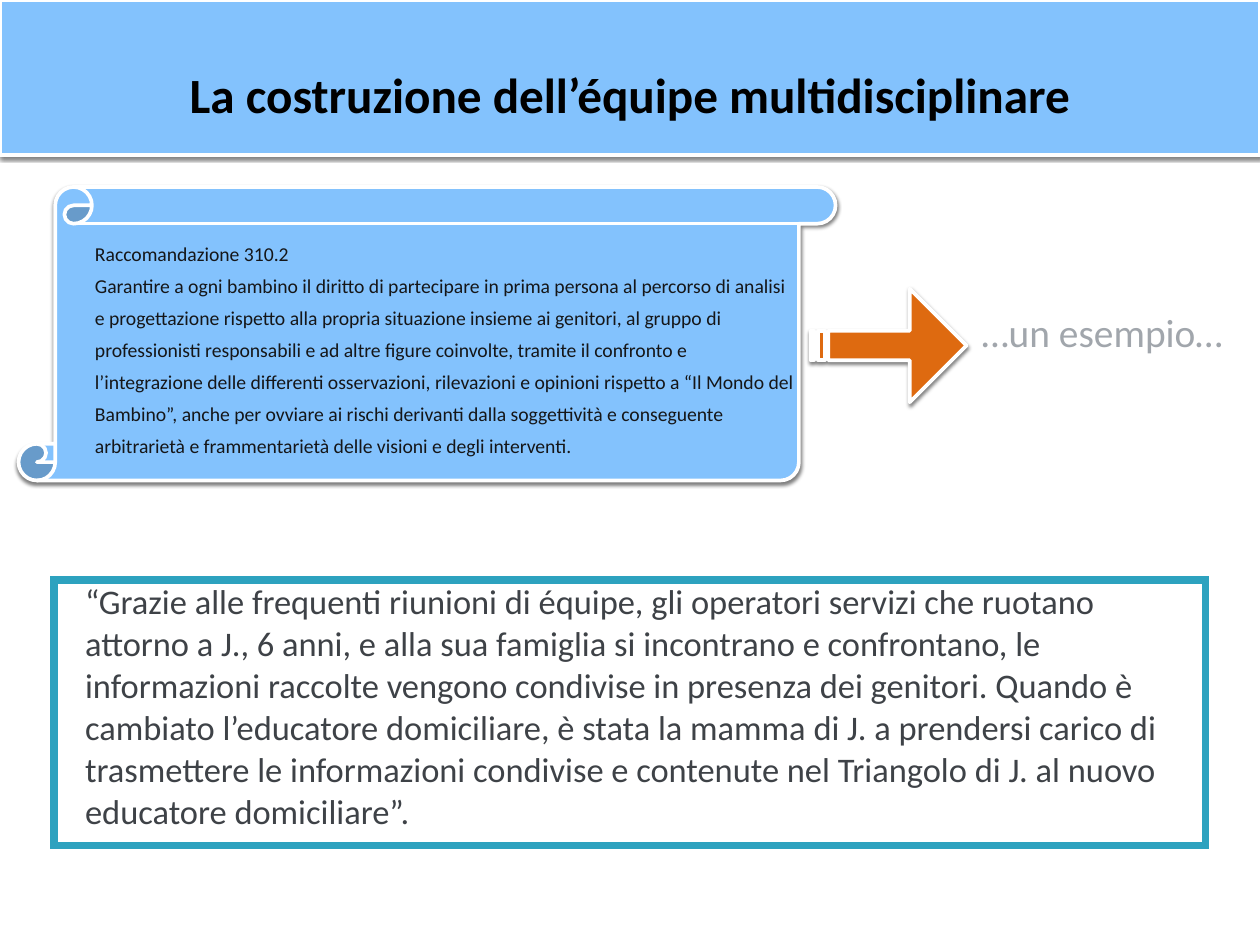
"""Build a slide on the multidisciplinary team: a recommendation and an example."""
from lxml import etree
from pptx import Presentation
from pptx.dml.color import RGBColor
from pptx.enum.shapes import MSO_SHAPE
from pptx.enum.text import MSO_ANCHOR, PP_ALIGN
from pptx.oxml.ns import qn
from pptx.util import Pt

RECT = MSO_SHAPE.RECTANGLE
SCROLL = MSO_SHAPE.VERTICAL_SCROLL
ARROW = MSO_SHAPE.STRIPED_RIGHT_ARROW
TOP, MIDDLE = MSO_ANCHOR.TOP, MSO_ANCHOR.MIDDLE
LEFT, CENTER = PP_ALIGN.LEFT, PP_ALIGN.CENTER

TITLE = "La costruzione dell’équipe multidisciplinare"
RECOMMENDATION = [
    ("Raccomandazione 310.2", Pt(30)),
    ("Garantire a ogni bambino il diritto di partecipare in prima persona al percorso "
     "di analisi e progettazione rispetto alla propria situazione insieme ai genitori, "
     "al gruppo di professionisti responsabili e ad altre figure coinvolte, tramite il "
     "confronto e l’integrazione delle differenti osservazioni, rilevazioni e opinioni "
     "rispetto a “Il Mondo del Bambino”, anche per ovviare ai rischi derivanti dalla "
     "soggettività e conseguente arbitrarietà e frammentarietà delle visioni e degli "
     "interventi.", Pt(26)),
]
EXAMPLE_LABEL = "…un esempio…"
EXAMPLE = (
    "“Grazie alle frequenti riunioni di équipe, gli operatori servizi che ruotano "
    "attorno a J., 6 anni, e alla sua famiglia si incontrano e confrontano, le "
    "informazioni raccolte vengono condivise in presenza dei genitori. Quando è cambiato "
    "l’educatore domiciliare, è stata la mamma di J. a prendersi carico di trasmettere "
    "le informazioni condivise e contenute nel Triangolo di J. al nuovo educatore "
    "domiciliare”."
)

THEME = {
    "font": "Calibri",
    "panel": "83C2FD", "edge": "FFFFFF", "arrow": "DE6A10", "frame": "2DA2BF",
    "shadow": "000000",
    "title": (40, "000000", True),
    "recommendation": (16, "151618", False),
    "label": (32, "A1A6AC", False),
    "example": (28, "3E4247", False),
}

PAGE_WIDTH, PAGE_HEIGHT = 1024, 768
LABEL_LEFT = 793.4
FRAME_WIDTH = 936
FRAME_INDENT = 25.2


def color(name):
    return RGBColor.from_string(THEME[name])


def add_shadow(shape):
    effects = shape._element.spPr.find(qn("a:effectLst"))
    outer = etree.SubElement(effects, qn("a:outerShdw"), blurRad=str(Pt(3)),
                             dist=str(Pt(2)), dir="5400000", rotWithShape="0")
    tint = etree.SubElement(outer, qn("a:srgbClr"), val=THEME["shadow"])
    etree.SubElement(tint, qn("a:alpha"), val="50000")


def add_panel(page, kind, bounds, fill, edge="edge", weight=3):
    shape = page.shapes.add_shape(kind, *map(Pt, bounds))
    shape.shadow.inherit = False
    shape.line.color.rgb = color(edge)
    shape.line.width = Pt(weight)
    if fill:
        shape.fill.solid()
        shape.fill.fore_color.rgb = color(fill)
        add_shadow(shape)
    else:
        shape.fill.background()
    return shape


def write(shape, paragraphs, style, insets, anchor=TOP, align=LEFT, indent=0):
    size, ink, bold = THEME[style]
    frame = shape.text_frame
    frame.word_wrap = True
    frame.vertical_anchor = anchor
    (frame.margin_left, frame.margin_top,
     frame.margin_right, frame.margin_bottom) = map(Pt, insets)
    for index, (text, spacing) in enumerate(paragraphs):
        para = frame.add_paragraph() if index else frame.paragraphs[0]
        para.alignment = align
        para.line_spacing = spacing
        para._p.get_or_add_pPr().set("marL", str(Pt(indent)))
        para._p.get_or_add_pPr().set("indent", "0")
        span = para.add_run()
        span.text = text
        span.font.name = THEME["font"]
        span.font.size = Pt(size)
        span.font.bold = bold
        span.font.color.rgb = RGBColor.from_string(ink)


def main():
    deck = Presentation()
    deck.slide_width, deck.slide_height = Pt(PAGE_WIDTH), Pt(PAGE_HEIGHT)
    page = deck.slides.add_slide(deck.slide_layouts[6])

    scroll = add_panel(page, SCROLL, (15.1, 152, 664, 238.5), "panel")
    write(scroll, RECOMMENDATION, "recommendation", (4.3, 4.3, 2, 4.3), MIDDLE, indent=28)

    banner = add_panel(page, RECT, (0, 0, PAGE_WIDTH, 126), "panel")
    write(banner, [(TITLE, 0.9)], "title", (9.4, 57.6, 9.4, 4.3), align=CENTER)

    arrow = add_panel(page, ARROW, (658.8, 234.7, 126.7, 92.2), "arrow")
    arrow.adjustments[0], arrow.adjustments[1] = 0.26, 0.5

    label = page.shapes.add_textbox(
        *map(Pt, (LABEL_LEFT, 262.8, PAGE_WIDTH - LABEL_LEFT, 31.7)))
    write(label, [(EXAMPLE_LABEL, Pt(20))], "label", [4.3] * 4, MIDDLE)

    example = add_panel(page, RECT, ((PAGE_WIDTH - FRAME_WIDTH) / 2, 471.4, FRAME_WIDTH, 216),
                        None, "frame", 6)
    etree.SubElement(example.line._get_or_add_ln(), qn("a:miter"), lim="800000")
    write(example, [(EXAMPLE, Pt(34))], "example", (0, 0, FRAME_INDENT, 0),
          indent=FRAME_INDENT)

    deck.save("out.pptx")


if __name__ == "__main__":
    main()
